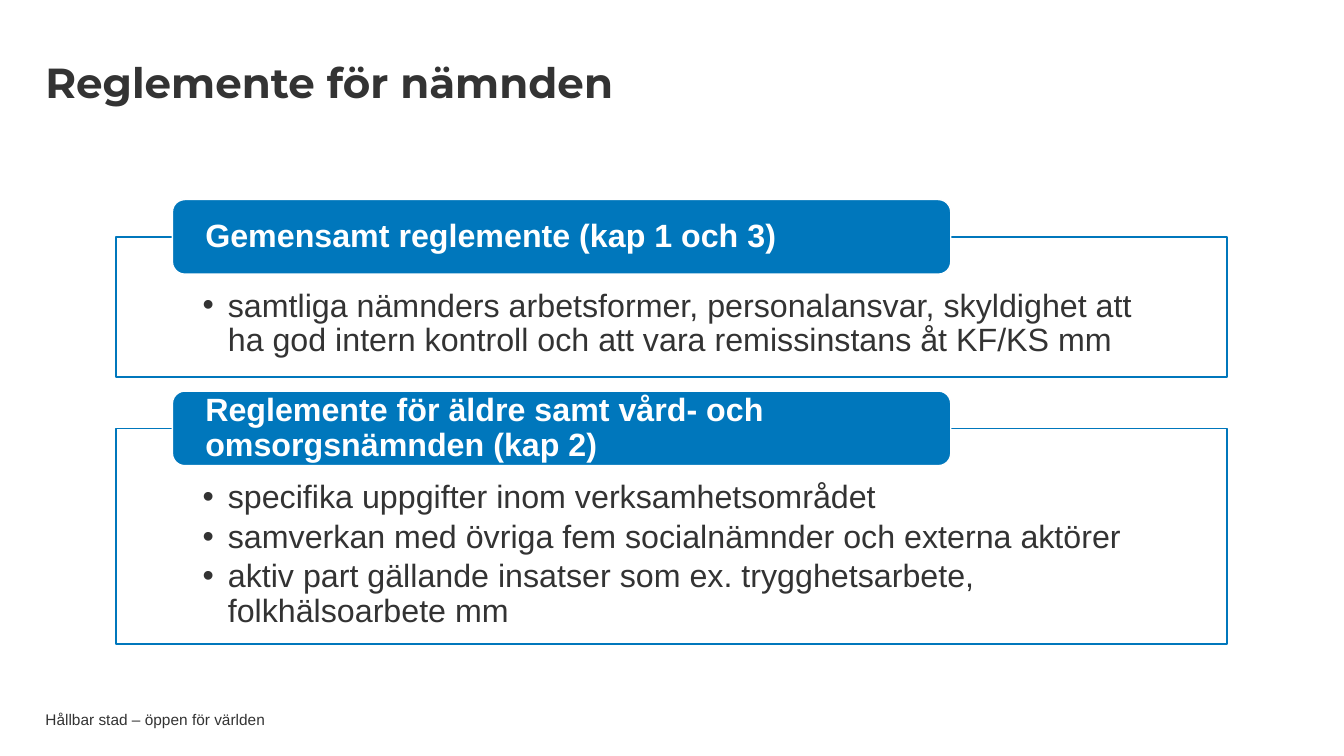
import pptx
import pptx.dml.color
import pptx.enum.shapes
import pptx.enum.text
import pptx.oxml.ns
import pptx.util
from lxml import etree

Inches = pptx.util.Inches
Pt = pptx.util.Pt
Anchor = pptx.enum.text.MSO_ANCHOR
Preset = pptx.enum.shapes.MSO_SHAPE

BLUE, WHITE, DARK = "0077BC", "FFFFFF", "333333"
PANEL_LEFT, PANEL_WIDTH = 1.15, 11.02
HEADER_LEFT, HEADER_WIDTH, HEADER_HEIGHT = 1.71, 7.72, 0.74

# Top, height, heading and bullets of each panel
SECTIONS = [
    (2.35, 1.39, "Gemensamt reglemente (kap 1 och 3)", [
        "samtliga nämnders arbetsformer, personalansvar, skyldighet att ha god "
        "intern kontroll och att vara remissinstans åt KF/KS mm",
    ]),
    (4.25, 2.14, "Reglemente för äldre samt vård- och omsorgsnämnden (kap 2)", [
        "specifika uppgifter inom verksamhetsområdet",
        "samverkan med övriga fem socialnämnder och externa aktörer",
        "aktiv part gällande insatser som ex. trygghetsarbete, folkhälsoarbete mm",
    ]),
]


def color(value):
    return pptx.dml.color.RGBColor.from_string(value)


def set_attributes(target, values):
    for name, value in values.items():
        setattr(target, name, value)


def add_bullet(paragraph):
    properties = paragraph._p.get_or_add_pPr()
    properties.set("marL", str(Inches(0.25)))
    properties.set("indent", str(Inches(-0.25)))
    for tag, key, value in (("a:buFont", "typeface", "Arial"), ("a:buChar", "char", "•")):
        etree.SubElement(properties, pptx.oxml.ns.qn(tag)).set(key, value)


class SlideBuilder:
    """Holds the slide and its shared text and shape style."""

    body = {"name": "Arial", "size": Pt(23), "bold": False}

    def __init__(self, slide):
        self.slide = slide

    def fill_text(self, shape, lines, text_color, margins, font=None,
                  anchor=Anchor.MIDDLE, spacing=0.9, after=0, bullets=False):
        """Fill a shape with paragraphs; margins are left, top, right, bottom."""
        frame = shape.text_frame
        sides = ("margin_left", "margin_top", "margin_right", "margin_bottom")
        set_attributes(frame, {"word_wrap": True, "vertical_anchor": anchor,
                               **dict(zip(sides, map(Inches, margins)))})
        for index, line in enumerate(lines):
            paragraph = frame.add_paragraph() if index else frame.paragraphs[0]
            if bullets:
                add_bullet(paragraph)
            set_attributes(paragraph, {"alignment": pptx.enum.text.PP_ALIGN.LEFT,
                                       "line_spacing": spacing, "space_after": Pt(after)})
            run = paragraph.add_run()
            run.text = line
            set_attributes(run.font, {**self.body, **(font or {})})
            run.font.color.rgb = color(text_color)

    def text(self, box, line, margins, font, spacing=0.9):
        shape = self.slide.shapes.add_textbox(*map(Inches, box))
        self.fill_text(shape, [line], DARK, margins, font, spacing=spacing)

    def block(self, preset, box, fill, line):
        shape = self.slide.shapes.add_shape(preset, *map(Inches, box))
        shape.shadow.inherit = False
        shape.fill.solid()
        shape.fill.fore_color.rgb = color(fill)
        shape.line.color.rgb = color(line)
        shape.line.width = Pt(1)
        return shape

    def section(self, top, height, heading, bullets):
        """Outlined bullet panel with a heading centred on its top edge."""
        panel = self.block(Preset.RECTANGLE, (PANEL_LEFT, top, PANEL_WIDTH, height), WHITE, BLUE)
        self.fill_text(panel, bullets, DARK, (0.86, 0.52, 0.86, 0.18),
                       anchor=Anchor.TOP, after=3.45, bullets=True)
        header_box = (HEADER_LEFT, top - HEADER_HEIGHT / 2, HEADER_WIDTH, HEADER_HEIGHT)
        header = self.block(Preset.ROUNDED_RECTANGLE, header_box, BLUE, WHITE)
        self.fill_text(header, [heading], WHITE, (0.29, 0, 0.29, 0), {"bold": True})


def main():
    presentation = pptx.Presentation()
    presentation.slide_width = Inches(13.33)
    presentation.slide_height = Inches(7.5)
    builder = SlideBuilder(presentation.slides.add_slide(presentation.slide_layouts[6]))
    builder.text((0.45, 7.06, 9.45, 0.16), "Hållbar stad – öppen för världen",
                 (0, 0, 0, 0), {"size": Pt(11)}, spacing=1.0)
    builder.text((0.45, 0.44, 10.03, 0.81), "Reglemente för nämnden", (0, 0.05, 0, 0.05),
                 {"name": "Montserrat", "size": Pt(30), "bold": True})
    for section in SECTIONS:
        builder.section(*section)
    presentation.save("out.pptx")


if __name__ == "__main__":
    main()
